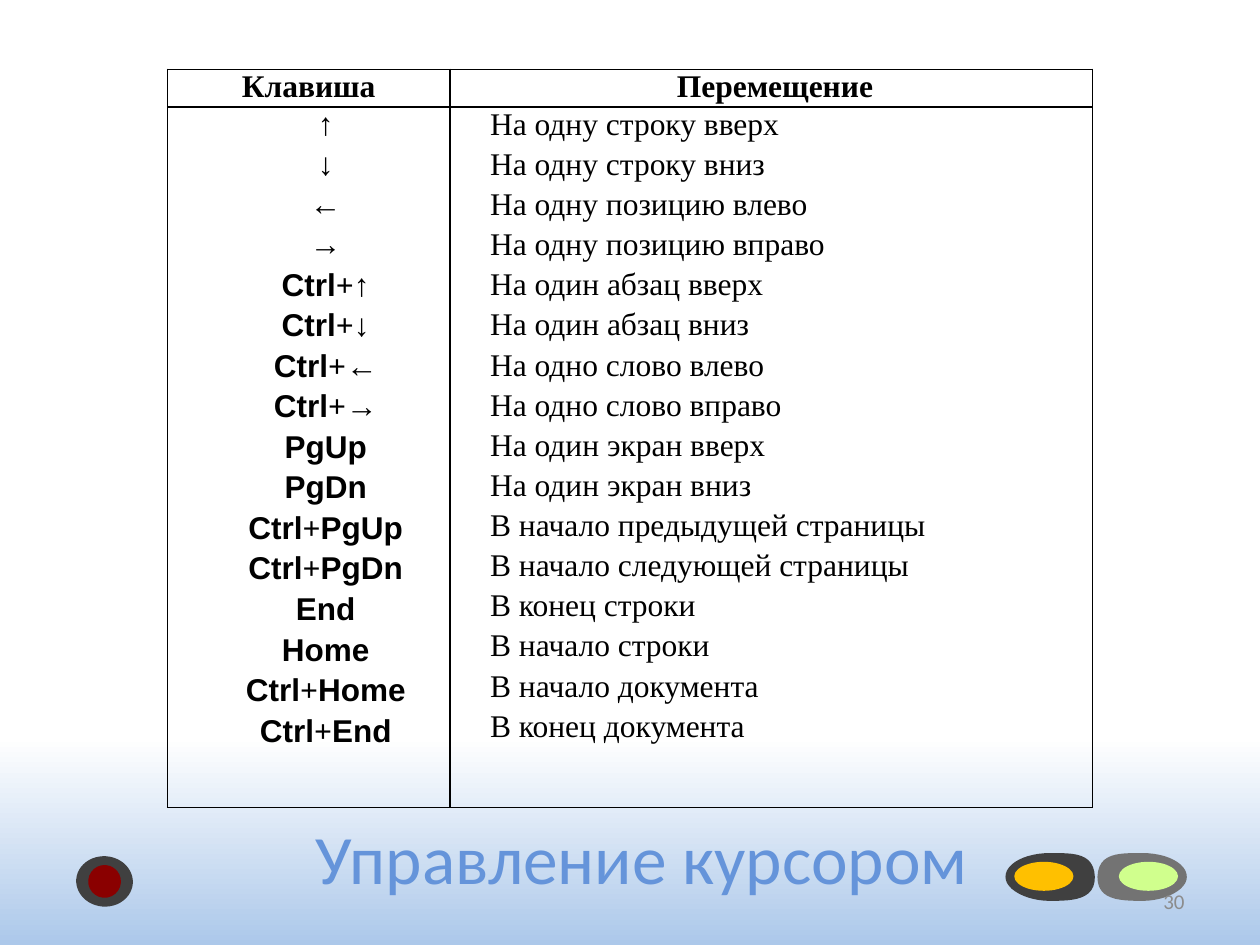
from dataclasses import dataclass
from itertools import groupby

from lxml import etree
from pptx import Presentation
from pptx import util as u
from pptx.dml.color import RGBColor
from pptx.enum import shapes, text
from pptx.oxml.ns import qn


@dataclass(frozen=True)
class Theme:
    """Colours, fonts and type sizes of the slide."""
    white: str = "FFFFFF"
    sky: str = "ACC8EA"
    ink: str = "000000"
    heading: str = "6594DA"
    muted: str = "8C8C8C"
    dark: str = "404040"
    gray: str = "737373"
    green: str = "D0FF8D"
    amber: str = "FFC000"
    red: str = "8A0000"
    sans: str = "Arial"
    serif: str = "Times New Roman"
    display: str = "Calibri"
    title_size: float = 39.6
    body_size: float = 18
    number_size: float = 12


THEME = Theme()
ALIGN = text.PP_ALIGN
HEADERS = ("Клавиша", " Перемещение")
MOVES = (
    ("↑", "На одну строку вверх"),
    ("↓", "На одну строку вниз"),
    ("←", "На одну позицию влево"),
    ("→", "На одну позицию вправо"),
    ("Ctrl+↑", "На один абзац вверх"),
    ("Ctrl+↓", "На один абзац вниз"),
    ("Ctrl+←", "На одно слово влево"),
    ("Ctrl+→", "На одно слово вправо"),
    ("PgUp", "На один экран вверх"),
    ("PgDn", "На один экран вниз"),
    ("Ctrl+PgUp", "В начало предыдущей страницы"),
    ("Ctrl+PgDn", "В начало следующей страницы"),
    ("End", "В конец строки"),
    ("Home", "В начало строки"),
    ("Ctrl+Home", "В начало документа"),
    ("Ctrl+End", "В конец документа"),
)
PILL_START = (0, 0.5)
PILL_CURVES = (
    ((0.01, 0), (0.23, 0), (0.5, 0)),
    ((0.77, 0), (1, 0.21), (1, 0.5)),
    ((1, 0.76), (0.77, 1), (0.5, 1)),
    ((0.23, 1), (0, 0.97), (0, 0.5)),
)


def apply(target, **values):
    """Set each given attribute on the target."""
    for name, value in values.items():
        setattr(target, name, value)


def add_run(paragraph, words, font, size, color, bold=False):
    """Append a formatted run to a paragraph."""
    run = paragraph.add_run()
    run.text = words
    apply(run.font, name=font, size=u.Pt(size), bold=bold)
    run.font.color.rgb = RGBColor.from_string(color)


def paint(shape, color):
    """Give a shape a flat fill with neither line nor shadow."""
    shape.fill.solid()
    shape.fill.fore_color.rgb = RGBColor.from_string(color)
    shape.line.fill.background()
    shape.shadow.inherit = False


def add_preset(slide, kind, box, color):
    """Add a flat preset shape in the box."""
    shape = slide.shapes.add_shape(kind, *map(u.Pt, box))
    paint(shape, color)
    return shape


def add_backdrop(slide, box):
    """Fill the box with a gradient that turns blue at the bottom."""
    backdrop = add_preset(slide, shapes.MSO_SHAPE.RECTANGLE, box, THEME.white)
    backdrop.fill.gradient()
    backdrop.fill.gradient_angle = 270
    stops = zip(backdrop.fill.gradient_stops, (0.78, 1), (THEME.white, THEME.sky))
    for stop, position, color in stops:
        stop.position = position
        stop.color.rgb = RGBColor.from_string(color)


def pill_points(steps=12):
    """Return points along the pill outline in unit coordinates."""
    start, points = PILL_START, []
    for first, second, end in PILL_CURVES:
        for step in range(1, steps + 1):
            t = step / steps
            weights = ((1 - t) ** 3, 3 * t * (1 - t) ** 2, 3 * t * t * (1 - t), t ** 3)
            controls = (start, first, second, end)
            points.append(tuple(sum(w * c[axis] for w, c in zip(weights, controls))
                                for axis in (0, 1)))
        start = end
    return points


def add_pill(slide, box, rim, lens, mirrored=False):
    """Add a navigation pill with an oval lens to the box."""
    left, top, width, height = box

    def place(point):
        """Map a unit point to the box."""
        x = 1 - point[0] if mirrored else point[0]
        return u.Pt(left + x * width), u.Pt(top + point[1] * height)

    outline = slide.shapes.build_freeform(*place(PILL_START), scale=1.0)
    outline.add_line_segments([place(point) for point in pill_points()], close=True)
    paint(outline.convert_to_shape(), rim)
    lens_width = 33.84
    inset = 5.04 if mirrored else 12.24
    lens_box = (left + inset, top + 5.04, lens_width, 16.56)
    add_preset(slide, shapes.MSO_SHAPE.OVAL, lens_box, lens)


def add_dot(slide, box):
    """Add a tilted round button with a red centre to the box."""
    left, top, width, height = box
    side = 18.72
    centre = (left + (width - side) / 2, top + (height - side) / 2, side, side)
    for part, color in ((box, THEME.dark), (centre, THEME.red)):
        add_preset(slide, shapes.MSO_SHAPE.OVAL, part, color).rotation = 274.4


def add_label(slide, box, words, size, color, align):
    """Add a vertically centred line of text to the box."""
    frame = slide.shapes.add_textbox(*map(u.Pt, box)).text_frame
    apply(frame, word_wrap=True, vertical_anchor=text.MSO_ANCHOR.MIDDLE)
    line = frame.paragraphs[0]
    line.alignment = align
    add_run(line, words, THEME.display, size, color)


def format_cell(cell):
    """Give a cell thin black borders, narrow margins and no fill."""
    apply(cell, margin_left=u.Pt(3.6), margin_right=u.Pt(3.6), margin_top=0, margin_bottom=0)
    properties = cell._tc.get_or_add_tcPr()
    for side in ("lnL", "lnR", "lnT", "lnB"):
        border = etree.SubElement(properties, qn(f"a:{side}"), w=str(u.Pt(1)))
        solid = etree.SubElement(border, qn("a:solidFill"))
        etree.SubElement(solid, qn("a:srgbClr"), val=THEME.ink)
    cell.fill.background()


def add_entry(cell, index, align):
    """Return an indented paragraph for the entry at the index."""
    frame = cell.text_frame
    entry = frame.add_paragraph() if index else frame.paragraphs[0]
    apply(entry, alignment=align, space_before=u.Pt(3 if index else 0))
    entry._p.get_or_add_pPr().set("indent", str(u.Pt(19.44)))
    return entry


def add_key_table(slide, box):
    """Add the table of cursor keys and movements to the box."""
    table = slide.shapes.add_table(2, 2, *map(u.Pt, box)).table
    apply(table, first_row=False, horz_banding=False)
    key_width, header_height = 161.28, 21.6
    for column, width in zip(table.columns, (key_width, box[2] - key_width)):
        column.width = u.Pt(width)
    for row, height in zip(table.rows, (header_height, box[3] - header_height)):
        row.height = u.Pt(height)
    for cell in table.iter_cells():
        format_cell(cell)
    for column, header in enumerate(HEADERS):
        line = table.cell(0, column).text_frame.paragraphs[0]
        apply(line, alignment=ALIGN.CENTER, space_after=u.Pt(3))
        add_run(line, header, THEME.serif, THEME.body_size, THEME.ink, True)
    for index, (keys, movement) in enumerate(MOVES):
        entry = add_entry(table.cell(1, 0), index, ALIGN.CENTER)
        for is_name, letters in groupby(keys, str.isalpha):
            font = THEME.sans if is_name else THEME.serif
            add_run(entry, "".join(letters), font, THEME.body_size, THEME.ink, True)
        entry = add_entry(table.cell(1, 1), index, ALIGN.JUSTIFY)
        add_run(entry, movement, THEME.serif, THEME.body_size, THEME.ink)


def main():
    """Build the slide and save it."""
    deck = Presentation()
    apply(deck, slide_width=u.Pt(720), slide_height=u.Pt(540))
    slide = deck.slides.add_slide(deck.slide_layouts[6])
    add_backdrop(slide, (0, 0, 720, 540))
    add_pill(slide, (627.12, 487.44, 51.12, 27.36), THEME.gray, THEME.green)
    add_pill(slide, (574.56, 487.44, 51.12, 27.36), THEME.dark, THEME.amber, mirrored=True)
    add_dot(slide, (45.36, 487.44, 28.8, 32.4))
    add_label(slide, (44.64, 461.52, 644.4, 56.16), "Управление курсором",
              THEME.title_size, THEME.heading, ALIGN.CENTER)
    add_key_table(slide, (95.76, 39.6, 528.48, 421.92))
    add_label(slide, (516.24, 500.4, 167.76, 28.8), "30",
              THEME.number_size, THEME.muted, ALIGN.RIGHT)
    deck.save("out.pptx")


if __name__ == "__main__":
    main()
